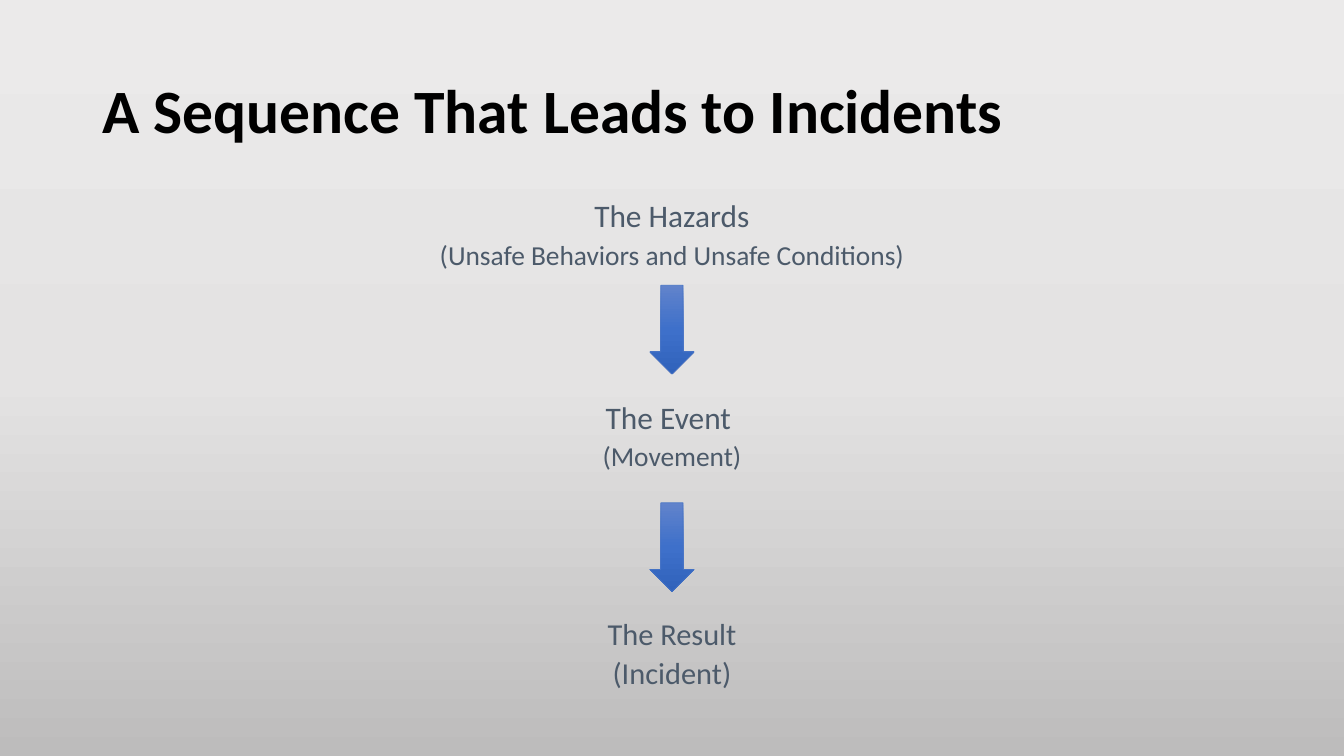
from copy import deepcopy

from pptx import Presentation
from pptx.dml.color import RGBColor
from pptx.enum.shapes import MSO_SHAPE as Shape
from pptx.enum.text import MSO_ANCHOR as Anchor, PP_ALIGN as Align
from pptx.oxml.ns import qn
from pptx.util import Cm, Pt


def color(value):
    return RGBColor.from_string(value)


def fill_gradient(fill, element, colors):
    fill.gradient()
    fill.gradient_angle = 270
    stop_list = next(element.iter(qn("a:gsLst")))
    while len(stop_list) < len(colors):
        stop_list.append(deepcopy(stop_list[0]))
    for index, (stop, value) in enumerate(zip(fill.gradient_stops, colors)):
        stop.color.rgb = color(value)
        stop.position = index / (len(colors) - 1)


def write(para, text, *, font, size, ink, bold=False, align=Align.LEFT, spacing=1.0, before=0):
    para.alignment = align
    para.line_spacing = spacing
    para.space_before = Pt(before)
    span = para.add_run()
    span.text = text
    span.font.name = font
    span.font.size = Pt(size)
    span.font.bold = bold
    span.font.color.rgb = color(ink)


class SequenceSlide:
    """Holds the style and the page, and draws each kind of element on it."""

    font = "Calibri"
    title_ink = "000000"
    step_ink = "4C5A6A"
    backdrop = ("EBEAEA", "E4E3E3", "BDBCBC")
    arrow_colors = ("6183CB", "3E70CA", "3062BB")
    arrow_line = "4472C4"
    left, width = 2.33, 29.21
    arrow_width, arrow_height = 1.12, 2.24

    def __init__(self, deck):
        self.page = deck.slides.add_slide(deck.slide_layouts[5])
        fill_gradient(self.page.background.fill, self.page._element, self.backdrop)

    def add_title(self, text):
        box = self.page.shapes.title
        box.left, box.top = Cm(self.left), Cm(1.01)
        box.width, box.height = Cm(self.width), Cm(3.68)
        frame = box.text_frame
        frame.word_wrap = True
        frame.vertical_anchor = Anchor.MIDDLE
        write(frame.paragraphs[0], text, font=self.font, size=44,
              ink=self.title_ink, bold=True, spacing=0.9)

    def add_step(self, top, lines):
        box = self.page.shapes.add_textbox(Cm(self.left), Cm(top), Cm(self.width), Cm(1.93))
        frame = box.text_frame
        frame.word_wrap = True
        for index, (text, size) in enumerate(lines):
            para = frame.add_paragraph() if index else frame.paragraphs[0]
            write(para, text, font=self.font, size=size, ink=self.step_ink,
                  align=Align.CENTER, spacing=0.7, before=10 if index else 0)

    def add_arrow(self, top):
        left = self.left + (self.width - self.arrow_width) / 2
        arrow = self.page.shapes.add_shape(
            Shape.DOWN_ARROW, Cm(left), Cm(top), Cm(self.arrow_width), Cm(self.arrow_height))
        arrow.shadow.inherit = False
        fill_gradient(arrow.fill, arrow._element, self.arrow_colors)
        arrow.line.color.rgb = color(self.arrow_line)
        arrow.line.width = Pt(0.5)


def main():
    deck = Presentation()
    deck.slide_width, deck.slide_height = Cm(33.87), Cm(19.05)
    slide = SequenceSlide(deck)
    slide.add_title("A Sequence That Leads to Incidents")
    steps = (
        (5.08, (("The Hazards", 22.4), ("(Unsafe Behaviors and Unsafe Conditions)", 19.6))),
        (10.16, (("The Event ", 22.4), ("(Movement)", 19.6))),
        (15.62, (("The Result", 21.7), ("(Incident)", 21.7))),
    )
    for top, lines in steps:
        slide.add_step(top, lines)
    for top in (7.19, 12.67):
        slide.add_arrow(top)
    deck.save("out.pptx")


if __name__ == "__main__":
    main()
